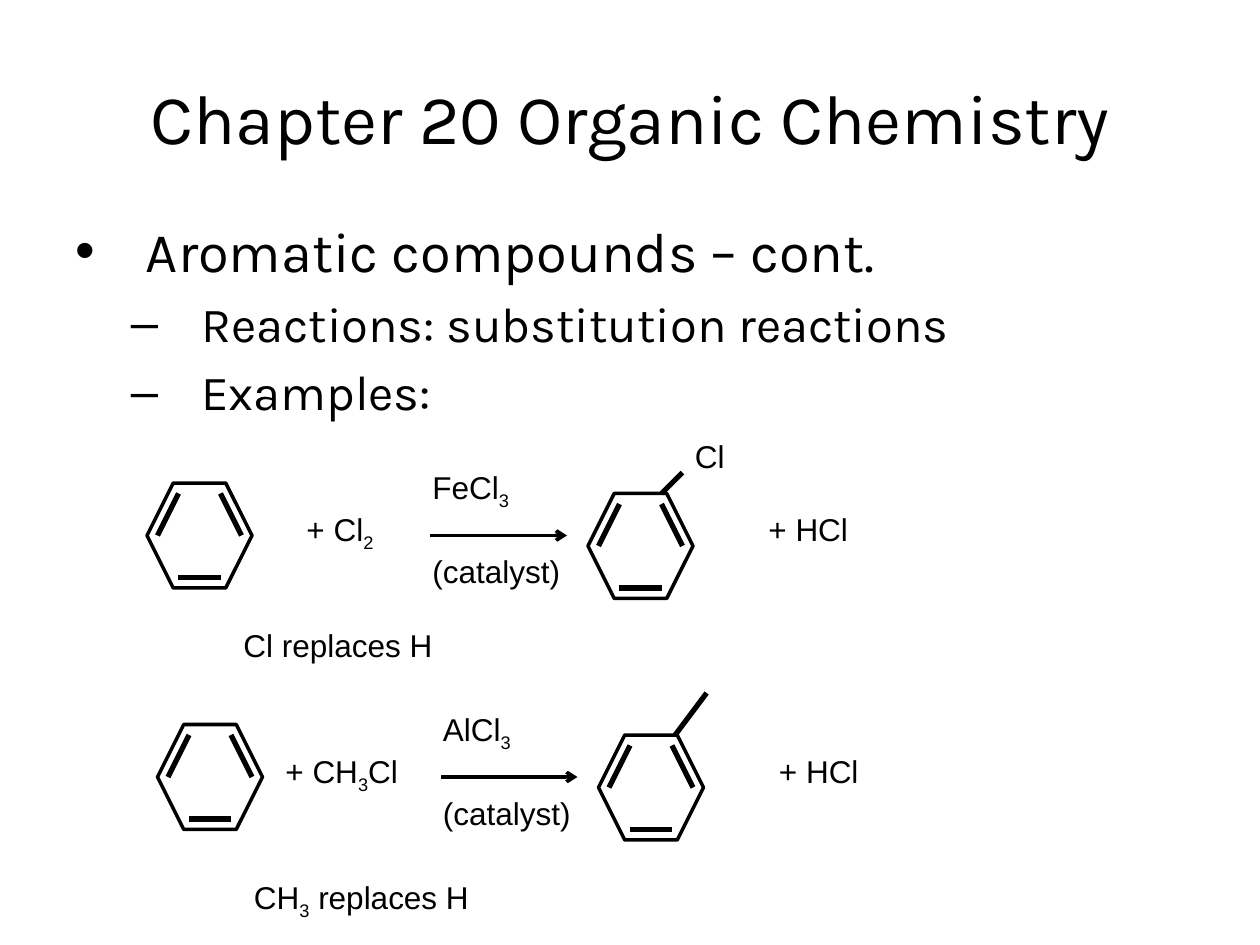
from dataclasses import dataclass
from itertools import groupby

from lxml import etree
from pptx import Presentation
from pptx.dml.color import RGBColor
from pptx.enum.shapes import MSO_CONNECTOR, MSO_SHAPE
from pptx.enum.text import MSO_ANCHOR, MSO_AUTO_SIZE, PP_ALIGN
from pptx.oxml.ns import qn
from pptx.util import Inches, Pt

HEXAGON = MSO_SHAPE.HEXAGON
STRAIGHT = MSO_CONNECTOR.STRAIGHT
MIDDLE = MSO_ANCHOR.MIDDLE
CENTER = PP_ALIGN.CENTER
FIT_SHAPE = MSO_AUTO_SIZE.SHAPE_TO_FIT_TEXT
TITLE_ONLY = 5

CELLS_PER_INCH = 12
RING_CELLS = 10
LABEL_ROWS = 4.8
# Inner bonds of a ring, in cells from its top left corner
RING_BONDS = [((3, 9), (7, 9)), ((1, 5), (3, 1)), ((7, 1), (9, 5))]


@dataclass(frozen=True)
class Theme:
    ink: RGBColor = RGBColor(0, 0, 0)
    heading_font: str = "Karla"
    label_font: str = "Arial"
    title_size: int = 40
    topic_size: int = 32
    point_size: int = 28
    label_size: int = 18
    outline: int = 2
    bond: int = 3


def cells(count):
    return Inches(count / CELLS_PER_INCH)


class ChemistrySlide:
    """Draws on one slide; positions are columns and rows of a 1/12 inch grid."""

    def __init__(self, deck, theme):
        self.theme = theme
        self.page = deck.slides.add_slide(deck.slide_layouts[TITLE_ONLY])

    def span(self, para, text, font, size):
        span = para.add_run()
        span.text = text
        span.font.name = font
        span.font.size = Pt(size)
        span.font.color.rgb = self.theme.ink
        return span

    def title(self, text):
        box = self.page.shapes.title
        box.left, box.top = Inches(0.5), Inches(0.3)
        box.width, box.height = Inches(9), Inches(1.25)
        box.text_frame.vertical_anchor = MIDDLE
        para = box.text_frame.paragraphs[0]
        para.alignment = CENTER
        self.span(para, text, self.theme.heading_font, self.theme.title_size)

    def text_box(self, column, row, columns, rows):
        box = self.page.shapes.add_textbox(*map(cells, (column, row, columns, rows)))
        box.text_frame.word_wrap = True
        return box.text_frame

    def outline(self, column, row, columns, rows, items):
        """Bulleted list; each item is (text, size, left indent in inches, bullet)."""
        frame = self.text_box(column, row, columns, rows)
        for index, (text, size, indent, bullet) in enumerate(items):
            para = frame.add_paragraph() if index else frame.paragraphs[0]
            para.space_before = Pt(size * 0.2)
            properties = para._p.get_or_add_pPr()
            properties.set("marL", str(Inches(indent)))
            properties.set("indent", str(Inches(-0.56)))
            etree.SubElement(properties, qn("a:buFont")).set("typeface", self.theme.label_font)
            etree.SubElement(properties, qn("a:buChar")).set("char", bullet)
            self.span(para, text, self.theme.heading_font, size)

    def formula(self, column, row, columns, text):
        """Label in which every digit is a subscript."""
        frame = self.text_box(column, row, columns, LABEL_ROWS)
        frame.auto_size = FIT_SHAPE
        for is_subscript, letters in groupby(text, str.isdigit):
            span = self.span(frame.paragraphs[0], "".join(letters),
                             self.theme.label_font, self.theme.label_size)
            if is_subscript:
                span._r.get_or_add_rPr().set("baseline", "-25000")

    def line(self, start, end, width, shapes=None):
        shapes = self.page.shapes if shapes is None else shapes
        line = shapes.add_connector(STRAIGHT, *map(cells, (*start, *end)))
        line.line.color.rgb = self.theme.ink
        line.line.width = Pt(width)
        etree.SubElement(line._element.spPr, qn("a:effectLst"))
        return line

    def arrow(self, start, end):
        arrow = self.line(start, end, self.theme.outline)
        etree.SubElement(arrow.line._get_or_add_ln(), qn("a:tailEnd")).set("type", "arrow")

    def benzene(self, column, row):
        shapes = self.page.shapes.add_group_shape().shapes
        ring = shapes.add_shape(HEXAGON, *map(cells, (column, row, RING_CELLS, RING_CELLS)))
        ring.shadow.inherit = False
        ring.fill.background()
        ring.line.color.rgb = self.theme.ink
        ring.line.width = Pt(self.theme.outline)
        for bond in RING_BONDS:
            start, end = ((column + x, row + y) for x, y in bond)
            self.line(start, end, self.theme.bond, shapes)

    def reaction(self, column, row, catalyst, substituent):
        """Ring, arrow with catalyst, and substituted ring, from the first ring's corner."""
        self.benzene(column, row)
        self.arrow((column + 27, row + 5), (column + 40, row + 5))
        self.formula(column + 26, row - 2, 13, catalyst)
        self.formula(column + 26, row + 6, 15, "(catalyst)")
        self.benzene(column + 42, row + 1)
        self.line(*substituent, self.theme.bond)
        self.formula(column + 58, row + 2, 10, "+ HCl")


def main():
    deck = Presentation()
    deck.slide_width, deck.slide_height = Inches(10), Inches(7.5)
    theme = Theme()
    slide = ChemistrySlide(deck, theme)

    slide.title("Chapter 20 Organic Chemistry")
    slide.outline(6, 20, 107, 18, [
        ("Aromatic compounds – cont.", theme.topic_size, 0.56, "•"),
        ("Reactions: substitution reactions", theme.point_size, 1, "–"),
        ("Examples:", theme.point_size, 1, "–"),
    ])

    slide.reaction(14, 46, "FeCl3", ((63, 47), (65, 45)))
    slide.formula(28, 48, 10, "+ Cl2")
    slide.formula(65, 41, 8, "Cl")
    slide.formula(22, 59, 23, "Cl replaces H")

    slide.reaction(15, 69, "AlCl3", ((64.3, 70), (67.3, 66)))
    slide.formula(26, 71, 14, "+ CH3Cl")
    slide.formula(23, 83, 63, "CH3 replaces H")

    deck.save("out.pptx")


if __name__ == "__main__":
    main()
